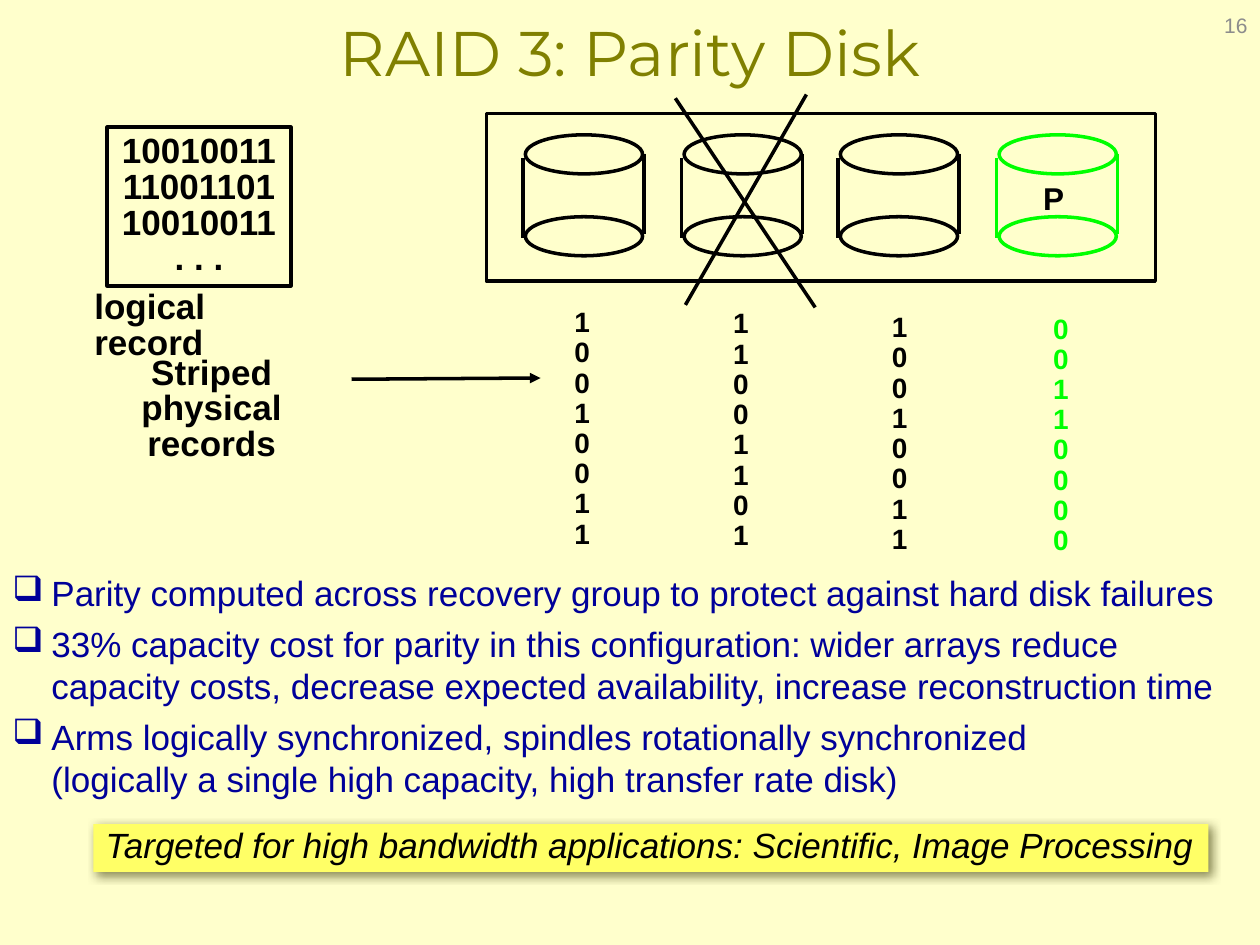
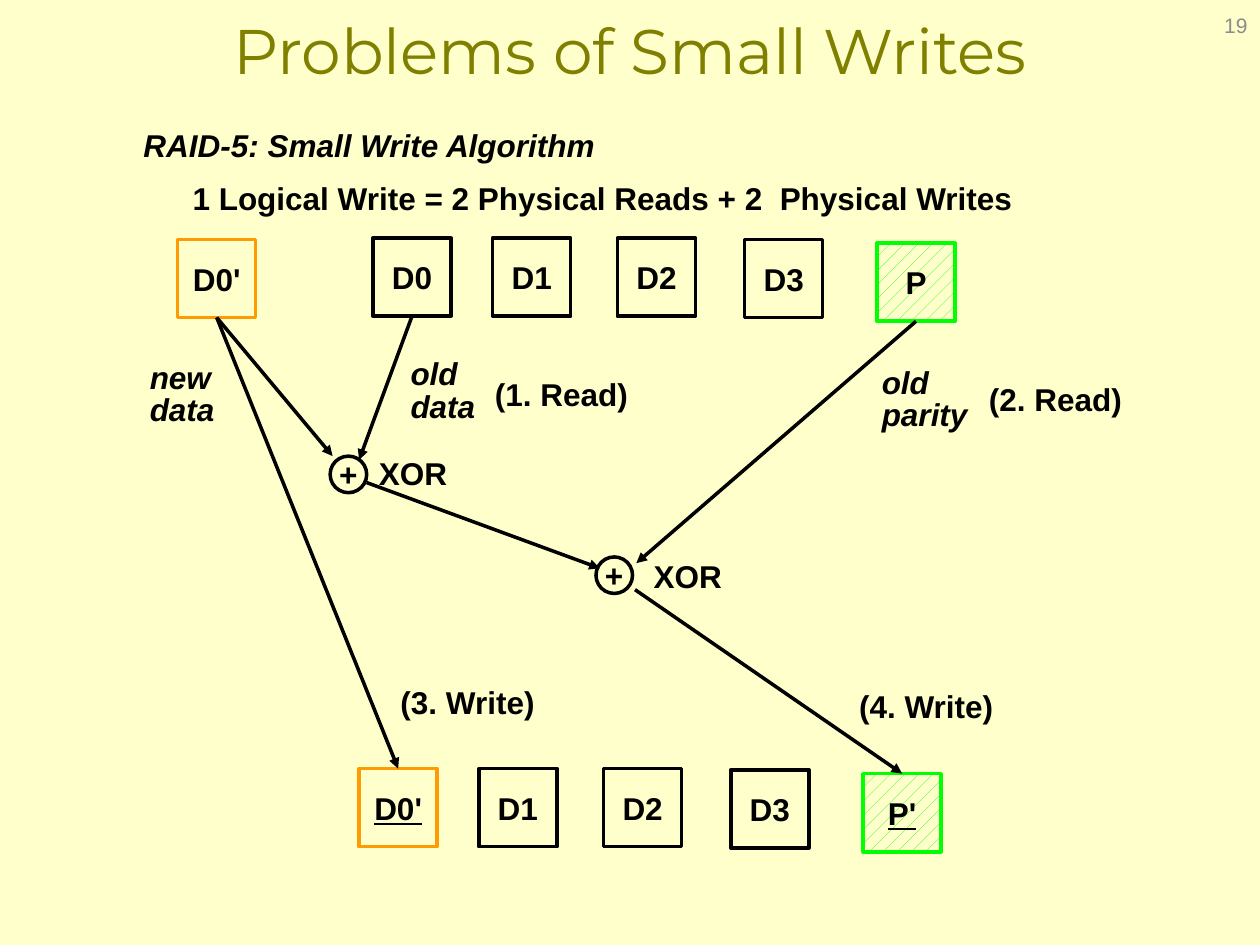
import dataclasses
import typing

import pptx
import pptx.dml.color
import pptx.enum.dml
import pptx.enum.shapes
import pptx.enum.text
import pptx.oxml
import pptx.oxml.ns
import pptx.util
from pptx.util import Inches

CREAM, BLACK, GREEN, ORANGE = "FFFFCC", "000000", "00FF00", "FE9B03"
OLIVE, NAVY, GREY, YELLOW = "808000", "000099", "8C8C8C", "FFFF66"
LEFT, CENTER, RIGHT = (
    pptx.enum.text.PP_ALIGN.LEFT,
    pptx.enum.text.PP_ALIGN.CENTER,
    pptx.enum.text.PP_ALIGN.RIGHT,
)
TOP, MIDDLE = pptx.enum.text.MSO_ANCHOR.TOP, pptx.enum.text.MSO_ANCHOR.MIDDLE
RECTANGLE = pptx.enum.shapes.MSO_SHAPE.RECTANGLE
OVAL = pptx.enum.shapes.MSO_SHAPE.OVAL
SIDE_TOP, SIDE_BOTTOM = 0, 2
BLOCK_SIZE = 0.62
XOR_SIZE = 0.29

Point = tuple[float, float]
Box = tuple[float, float, float, float]


@dataclasses.dataclass(frozen=True)
class TextStyle:
    size: float = 18
    color: str = BLACK
    bold: bool = True
    italic: bool = False
    underline: bool = False
    font: str = "Arial"
    align: typing.Any = LEFT
    anchor: typing.Any = TOP
    spacing: typing.Any = 0.85


@dataclasses.dataclass(frozen=True)
class Disk:
    left: float
    bits_left: float
    bits_top: float
    bits: str
    color: str = BLACK


@dataclasses.dataclass(frozen=True)
class Block:
    name: str
    left: float
    top: float
    color: str = BLACK
    parity: bool = False
    underline: bool = False


@dataclasses.dataclass(frozen=True)
class Label:
    lines: tuple[str, ...]
    box: Box
    italic: bool = False


TITLE = TextStyle(36, OLIVE, False, font="Montserrat", align=CENTER, anchor=MIDDLE, spacing=1.0)
PAGE_NUMBER = TextStyle(12, GREY, False, align=RIGHT, anchor=MIDDLE, spacing=1.0)
RECORD = TextStyle(20)
CENTERED_RECORD = dataclasses.replace(RECORD, align=CENTER, anchor=MIDDLE)
BULLET = TextStyle(20, NAVY, False, spacing=pptx.util.Pt(24))
TARGET = TextStyle(20, bold=False, italic=True)
BLOCK_NAME = TextStyle(align=CENTER, anchor=MIDDLE, spacing=1.0)

DISKS = [
    Disk(4.17, 4.46, 2.40, "10010011"),
    Disk(5.43, 5.72, 2.41, "11001101"),
    Disk(6.67, 6.98, 2.44, "10010011"),
    Disk(7.93, 8.26, 2.45, "00110000", GREEN),
]
BULLETS = [
    ("Parity computed across recovery group to protect against hard disk failures",),
    (
        "33% capacity cost for parity in this configuration: wider arrays reduce",
        "capacity costs, decrease expected availability, increase reconstruction time",
    ),
    (
        "Arms logically synchronized, spindles rotationally synchronized",
        "(logically a single high capacity, high transfer rate disk)",
    ),
]
NEW_DATA = Block("D0'", 1.41, 1.90, ORANGE)
OLD_BLOCKS = [
    Block("D0", 2.96, 1.89),
    Block("D1", 3.91, 1.89),
    Block("D2", 4.90, 1.89),
    Block("D3", 5.91, 1.90),
    Block("P", 6.96, 1.93, GREEN, parity=True),
]
REWRITTEN = {"D0": ORANGE, "P": GREEN}
LABELS = [
    Label(("RAID-5: Small Write Algorithm",), (1.04, 1, 3.8, 0.35), True),
    Label(("1 Logical Write = 2 Physical Reads + 2  Physical Writes",), (1.43, 1.42, 6.72, 0.35)),
    Label(("new", "data"), (1.09, 2.84, 0.71, 0.61), True),
    Label(("old", "data"), (3.16, 2.81, 0.71, 0.61), True),
    Label(("old", "parity"), (6.9, 2.88, 0.88, 0.61), True),
    Label(("XOR",), (2.91, 3.6, 0.74, 0.35)),
    Label(("XOR",), (5.09, 4.42, 0.74, 0.35)),
    Label(("(1. Read)",), (3.83, 2.97, 1.25, 0.35)),
    Label(("(2. Read)",), (7.75, 3.01, 1.25, 0.35)),
    Label(("(3. Write)",), (3.08, 5.42, 1.27, 0.35)),
    Label(("(4. Write)",), (6.72, 5.45, 1.27, 0.35)),
]


def rgb(color: str) -> pptx.dml.color.RGBColor:
    return pptx.dml.color.RGBColor.from_string(color)


def inches(lengths: typing.Iterable[float]) -> list[pptx.util.Length]:
    return [Inches(length) for length in lengths]


def xml(tag: str, content: str = "") -> typing.Any:
    name = tag.split()[0]
    return pptx.oxml.parse_xml(f"<a:{tag} {pptx.oxml.ns.nsdecls('a')}>{content}</a:{name}>")


def format_paragraph(paragraph: typing.Any, style: TextStyle) -> None:
    paragraph.alignment = style.align
    paragraph.line_spacing = style.spacing
    font = paragraph.font
    font.name, font.size = style.font, pptx.util.Pt(style.size)
    font.bold, font.italic, font.underline = style.bold, style.italic, style.underline
    font.color.rgb = rgb(style.color)


def write(frame: typing.Any, lines: typing.Iterable[str], style: TextStyle, wrap: bool = False) -> None:
    frame.text = "\n".join(lines)
    frame.word_wrap = wrap
    frame.auto_size = pptx.enum.text.MSO_AUTO_SIZE.NONE
    frame.vertical_anchor = style.anchor
    for paragraph in frame.paragraphs:
        format_paragraph(paragraph, style)


def add_text(slide: typing.Any, lines: typing.Iterable[str], box: Box, style: TextStyle) -> None:
    write(slide.shapes.add_textbox(*inches(box)).text_frame, lines, style)


def add_shape(
    slide: typing.Any, kind: typing.Any, box: Box, fill: str | None = None, line: str | None = BLACK
) -> typing.Any:
    shape = slide.shapes.add_shape(kind, *inches(box))
    shape.shadow.inherit = False
    if fill:
        shape.fill.solid()
        shape.fill.fore_color.rgb = rgb(fill)
    else:
        shape.fill.background()
    if line:
        shape.line.color.rgb = rgb(line)
        shape.line.width = pptx.util.Pt(2)
    else:
        shape.line.fill.background()
    return shape


def add_line(
    slide: typing.Any, start: Point, end: Point, color: str = BLACK, arrow: bool = False
) -> typing.Any:
    line = slide.shapes.add_connector(
        pptx.enum.shapes.MSO_CONNECTOR.STRAIGHT, *inches(start + end)
    )
    line.line.color.rgb = rgb(color)
    line.line.width = pptx.util.Pt(2)
    properties = line.element.spPr
    if arrow:
        properties.find(pptx.oxml.ns.qn("a:ln")).append(xml('tailEnd type="triangle"'))
    properties.append(xml("effectLst"))
    return line


def add_slide(prs: typing.Any, title: str, number: int, top: float, height: float) -> typing.Any:
    slide = prs.slides.add_slide(prs.slide_layouts.get_by_name("Title Only"))
    heading = slide.shapes.title
    heading.left, heading.top, heading.width, heading.height = inches((0, top, 10, height))
    write(heading.text_frame, [title], TITLE, wrap=True)
    add_text(slide, [str(number)], (7.67, 0, 2.33, 0.4), PAGE_NUMBER)
    return slide


def add_disk(slide: typing.Any, disk: Disk) -> None:
    for top in (1.07, 1.72):
        add_shape(slide, OVAL, (disk.left, top, 0.93, 0.31), CREAM, disk.color)
    for x, top in ((disk.left - 0.02, 1.25), (disk.left + 0.94, 1.22)):
        add_line(slide, (x, top), (x, top + 0.64), disk.color)
    style = TextStyle(16, disk.color, spacing=0.9)
    add_text(slide, disk.bits, (disk.bits_left, disk.bits_top, 0.32, 2.03), style)


def add_bullets(slide: typing.Any) -> None:
    frame = slide.shapes.add_textbox(*inches((0, 4.49, 9.9, 1.93))).text_frame
    write(frame, [lines[0] for lines in BULLETS], BULLET, wrap=True)
    for position, (paragraph, lines) in enumerate(zip(frame.paragraphs, BULLETS)):
        for line in lines[1:]:
            paragraph.add_line_break()
            paragraph.add_run().text = line
        if position:
            paragraph.space_before = pptx.util.Pt(5)
        properties = paragraph._p.get_or_add_pPr()
        properties.set("marL", str(Inches(0.31)))
        properties.set("indent", str(-Inches(0.31)))
        properties.insert_element_before(xml('buChar char="❑"'), "a:defRPr")


def add_target_band(slide: typing.Any) -> None:
    band = add_shape(slide, RECTANGLE, (0.74, 6.54, 8.85, 0.38), YELLOW, None)
    write(
        band.text_frame,
        ["Targeted for high bandwidth applications: Scientific, Image Processing"],
        TARGET,
    )
    effects = band.element.spPr.find(pptx.oxml.ns.qn("a:effectLst"))
    blur, distance = pptx.util.Pt(5), pptx.util.Pt(3)
    effects.append(
        xml(
            f'outerShdw blurRad="{blur}" dist="{distance}" dir="2700000" algn="ctr" rotWithShape="0"',
            '<a:srgbClr val="666633"><a:alpha val="75000"/></a:srgbClr>',
        )
    )


def add_block(slide: typing.Any, block: Block) -> typing.Any:
    box = (block.left, block.top, BLOCK_SIZE, BLOCK_SIZE)
    shape = add_shape(slide, RECTANGLE, box, line=block.color)
    if block.parity:
        shape.fill.patterned()
        shape.fill.pattern = pptx.enum.dml.MSO_PATTERN.PERCENT_10
        shape.fill.fore_color.rgb = rgb(GREEN)
        shape.fill.back_color.rgb = rgb(CREAM)
    write(shape.text_frame, [block.name], dataclasses.replace(BLOCK_NAME, underline=block.underline))
    return shape


def after_write(block: Block) -> Block:
    moved = dataclasses.replace(block, left=block.left - 0.11, top=block.top + 4.21)
    if block.name not in REWRITTEN:
        return moved
    return dataclasses.replace(
        moved, name=block.name + "'", color=REWRITTEN[block.name], underline=True
    )


def build_parity_disk(prs: typing.Any) -> None:
    slide = add_slide(prs, "RAID 3: Parity Disk", 16, 0.06, 0.69)
    for disk in DISKS:
        add_disk(slide, disk)
    add_shape(slide, RECTANGLE, (3.86, 0.9, 5.31, 1.33))
    add_text(slide, ["P"], (8.18, 1.42, 0.36, 0.35), TextStyle())
    logical_record = add_shape(slide, RECTANGLE, (0.85, 1.01, 1.46, 1.26), CREAM)
    write(logical_record.text_frame, ["10010011", "11001101", "10010011", ". . ."], CENTERED_RECORD)
    add_text(slide, ["logical", "record"], (0.65, 2.26, 1.08, 0.66), RECORD)
    striped = dataclasses.replace(CENTERED_RECORD, anchor=TOP)
    add_text(slide, ["Striped", "physical", "records"], (0.51, 2.78, 2.34, 0.95), striped)
    add_line(slide, (5.36, 0.78), (6.47, 2.44))
    add_line(slide, (6.4, 0.75), (5.44, 2.42))
    add_line(slide, (2.79, 3.01), (4.29, 3), arrow=True)
    add_bullets(slide)
    add_target_band(slide)


def build_small_writes(prs: typing.Any) -> None:
    slide = add_slide(prs, "Problems of Small Writes", 19, 0.08, 0.62)
    new_data = add_block(slide, NEW_DATA)
    old = {block.name: add_block(slide, block) for block in OLD_BLOCKS}
    written = {block.name: add_block(slide, after_write(block)) for block in OLD_BLOCKS}
    for left, top in ((2.62, 3.62), (4.73, 4.42)):
        xor = add_shape(slide, OVAL, (left, top, XOR_SIZE, XOR_SIZE), CREAM)
        write(xor.text_frame, ["+"], BLOCK_NAME)
    flows = [
        (new_data, (1.72, 2.52), (2.64, 3.62), None),
        (old["D0"], (3.27, 2.51), (2.85, 3.65), None),
        (None, (2.91, 3.83), (4.76, 4.51), None),
        (old["P"], (7.27, 2.55), (5.05, 4.47), None),
        (None, (5.04, 4.68), (7.16, 6.14), written["P"]),
        (new_data, (1.72, 2.52), (3.16, 6.1), written["D0"]),
    ]
    for source, start, end, target in flows:
        arrow = add_line(slide, start, end, arrow=True)
        if source:
            arrow.begin_connect(source, SIDE_BOTTOM)
        if target:
            arrow.end_connect(target, SIDE_TOP)
    for label in LABELS:
        add_text(slide, label.lines, label.box, TextStyle(italic=label.italic))


def main() -> None:
    prs = pptx.Presentation()
    prs.slide_width, prs.slide_height = Inches(10), Inches(7.5)
    background = prs.slide_master.background.fill
    background.solid()
    background.fore_color.rgb = rgb(CREAM)
    build_parity_disk(prs)
    build_small_writes(prs)
    prs.save("out.pptx")


if __name__ == "__main__":
    main()
